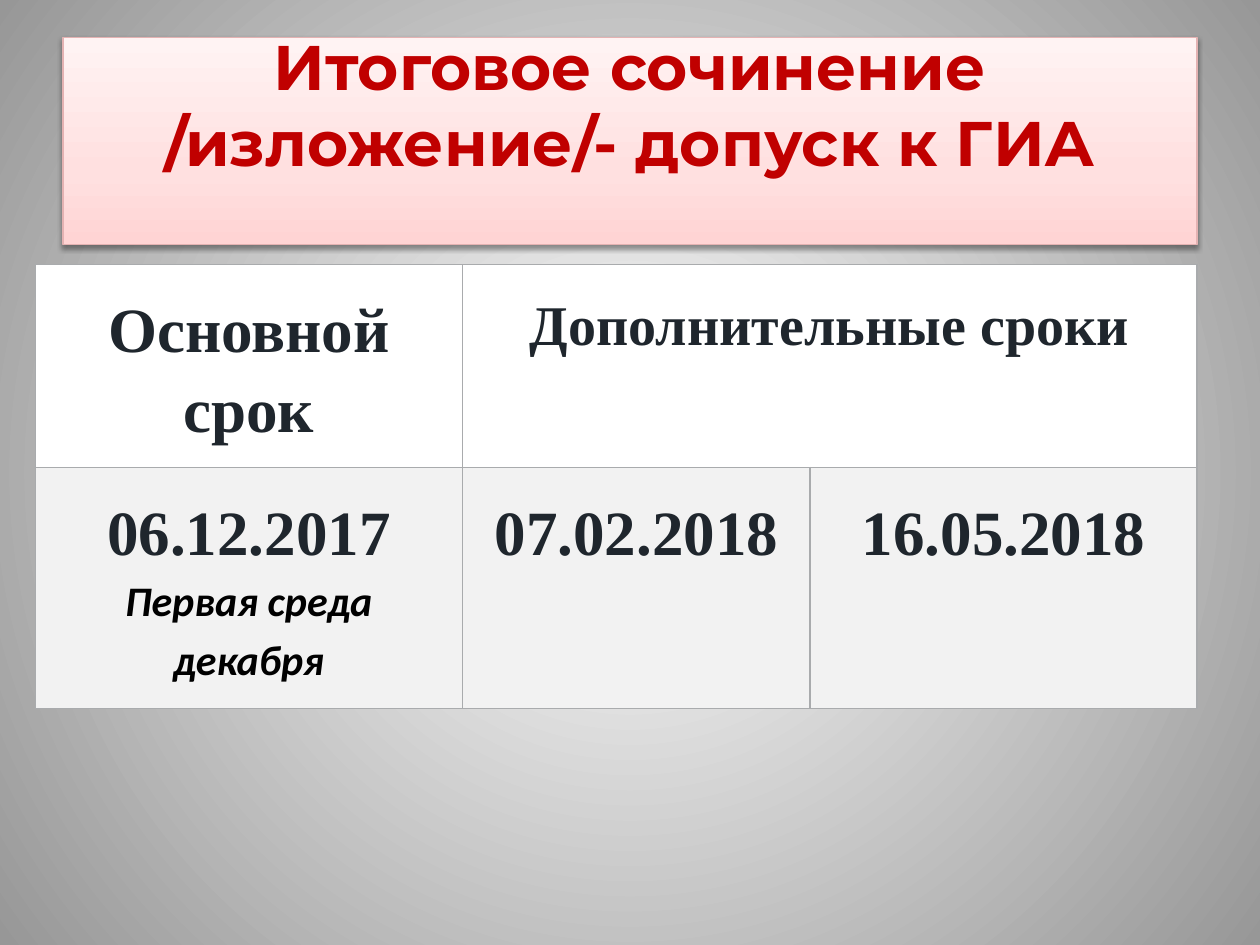
from lxml import etree
from pptx import Presentation, util as u
from pptx.dml.color import RGBColor
from pptx.enum import shapes, text
from pptx.oxml import parse_xml
from pptx.oxml.ns import nsdecls, qn

RED = RGBColor(0xC0, 0x00, 0x00)
PINK_EDGE = RGBColor(0xE4, 0xB2, 0xB2)
INK = RGBColor(0x1F, 0x26, 0x2D)
BLACK = RGBColor(0x00, 0x00, 0x00)
WHITE = RGBColor(0xFF, 0xFF, 0xFF)
PALE = RGBColor(0xF2, 0xF2, 0xF2)
GRID = RGBColor(0xA9, 0xAB, 0xAD)

# Content
HEADING = "Итоговое сочинение /изложение/- допуск к ГИА"
HEADING_FONT, HEADING_SIZE = "Montserrat", 36
BACKDROP = [(0, "FFFFFF"), (100, "979797")]
HEADING_FILL = [(0, "FFD4D4"), (35, "FFE0E0"), (100, "FFF3F3")]

# Styles: font, size, colour, italic
LARGE = ("Times New Roman", 36, INK, False)
MEDIUM = ("Times New Roman", 32, INK, False)
REMARK = ("Calibri", 24, BLACK, True)

# Each cell is a list of (text, style) paragraphs
DATES = [
    [[("Основной срок", LARGE)], [("Дополнительные сроки", MEDIUM)], []],
    [[("06.12.2017", LARGE), ("Первая среда декабря", REMARK)],
     [("07.02.2018", LARGE)], [("16.05.2018", LARGE)]],
]
ROW_FILLS = [WHITE, PALE]
COLUMNS = [3.39, 2.76, 3.07]
ROWS = [1.34, 1.57]


def set_gradient(fill, stops, direction):
    """Replace a solid fill by a gradient with any number of stops."""
    fill.solid()
    solid = fill._xPr.find(qn("a:solidFill"))
    marks = "".join(f'<a:gs pos="{pos * 1000}"><a:srgbClr val="{colour}"/></a:gs>'
                    for pos, colour in stops)
    gradient = parse_xml(f'<a:gradFill {nsdecls("a")} rotWithShape="1">'
                         f'<a:gsLst>{marks}</a:gsLst>{direction}</a:gradFill>')
    solid.getparent().replace(solid, gradient)


def add_run(paragraph, words, font, size, colour, italic=False):
    run = paragraph.add_run()
    run.text = words
    run.font.name, run.font.size = font, u.Pt(size)
    run.font.bold, run.font.italic = True, italic
    run.font.color.rgb = colour


def set_borders(cell):
    props = cell._tc.get_or_add_tcPr()
    for index, side in enumerate(("lnL", "lnR", "lnT", "lnB")):
        props.insert(index, parse_xml(
            f'<a:{side} {nsdecls("a")} w="{u.Pt(1)}"><a:solidFill>'
            f'<a:srgbClr val="{GRID}"/></a:solidFill></a:{side}>'))


deck = Presentation()
deck.slide_width, deck.slide_height = u.Inches(10), u.Inches(7.5)
slide = deck.slides.add_slide(deck.slide_layouts[6])
set_gradient(slide.background.fill, BACKDROP,
             '<a:path path="circle"><a:fillToRect l="50000" t="50000" '
             'r="50000" b="50000"/></a:path>')

# Heading panel with a soft shadow below
heading = slide.shapes.add_shape(
    shapes.MSO_SHAPE.RECTANGLE, *map(u.Inches, (0.5, 0.3, 9, 1.64)))
set_gradient(heading.fill, HEADING_FILL, '<a:lin ang="16200000" scaled="1"/>')
heading.line.color.rgb = PINK_EDGE
heading.line.width = u.Pt(0.75)
heading.shadow.inherit = False
heading._element.spPr.find(qn("a:effectLst")).append(parse_xml(
    f'<a:outerShdw {nsdecls("a")} blurRad="{u.Pt(3.1)}" dist="{u.Pt(1.6)}" '
    'dir="5400000" rotWithShape="0"><a:srgbClr val="000000">'
    '<a:alpha val="38000"/></a:srgbClr></a:outerShdw>'))
frame = heading.text_frame
frame.word_wrap = True
frame.vertical_anchor = text.MSO_ANCHOR.MIDDLE
line = frame.paragraphs[0]
line.alignment = text.PP_ALIGN.CENTER
add_run(line, HEADING, HEADING_FONT, HEADING_SIZE, RED)
line.add_line_break()
line_end = etree.SubElement(line._p, qn("a:endParaRPr"), sz=str(HEADING_SIZE * 100))
etree.SubElement(line_end, qn("a:latin"), typeface=HEADING_FONT)

# Table of dates
dates = slide.shapes.add_table(
    len(ROWS), len(COLUMNS), u.Inches(0.28), u.Inches(2.1),
    u.Inches(sum(COLUMNS)), u.Inches(sum(ROWS))).table
for column, width in zip(dates.columns, COLUMNS):
    column.width = u.Inches(width)
for row, height in zip(dates.rows, ROWS):
    row.height = u.Inches(height)
dates.cell(0, 1).merge(dates.cell(0, 2))

for r, (row, fill) in enumerate(zip(DATES, ROW_FILLS)):
    for c, entries in enumerate(row):
        cell = dates.cell(r, c)
        cell.fill.solid()
        cell.fill.fore_color.rgb = fill
        cell.margin_left = cell.margin_right = u.Inches(0.2)
        cell.margin_top = cell.margin_bottom = u.Inches(0.17)
        set_borders(cell)
        for n, (words, style) in enumerate(entries):
            frame = cell.text_frame
            entry = frame.add_paragraph() if n else frame.paragraphs[0]
            entry.alignment = text.PP_ALIGN.CENTER
            entry.line_spacing = 1.15
            add_run(entry, words, *style)

deck.save("out.pptx")
